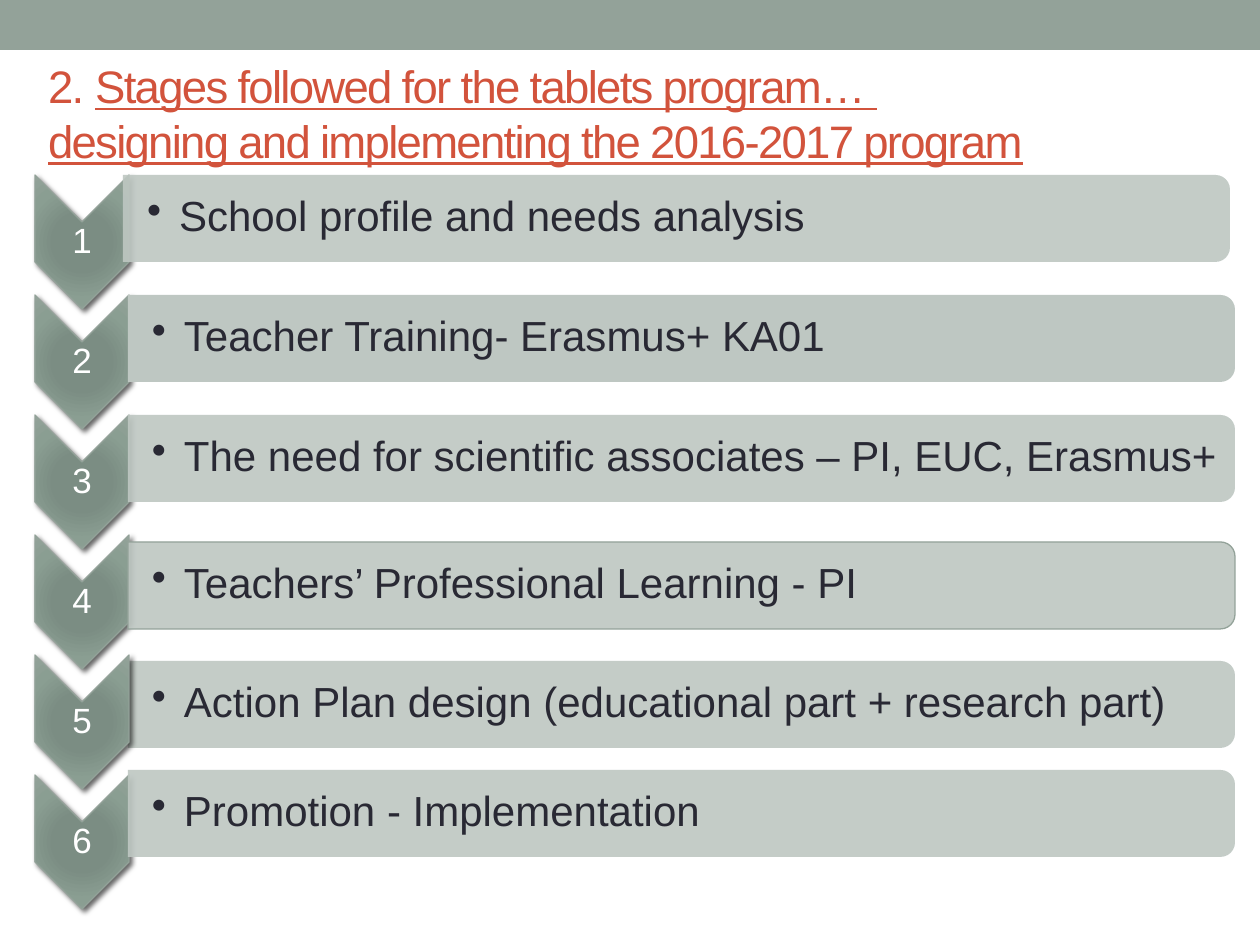
import pptx
import pptx.util
import pptx.dml.color
import pptx.enum.shapes
import pptx.enum.text
import pptx.oxml
import pptx.oxml.ns

PX = 914400 / 126
THEME = {
    "font": "Arial", "title_size": 26, "number_size": 20, "stage_size": 24,
    "accent": "93A299", "bar": "BEC7C2", "title": "D2533C", "number": "FFFFFF", "text": "292934",
    "chevron": [(0, "7B8E82"), (34, "7B8D83"), (70, "8A9E92"), (100, "93A299")],
}
NS = pptx.oxml.ns.nsdecls("a")
SHAPES = pptx.enum.shapes.MSO_SHAPE
ALIGN = pptx.enum.text.PP_ALIGN

deck = pptx.Presentation()
deck.slide_width, deck.slide_height = round(1260 * PX), round(945 * PX)
page = deck.slides.add_slide(deck.slide_layouts[6])


def add_text(runs, left, top, width, height, size, color, insets=(13, 6),
             align=ALIGN.LEFT, line=1.0, bullet=False, spacing=0):
    """Add a middle-anchored text box; runs are (text, underlined) pairs."""
    box = page.shapes.add_textbox(*(round(n * PX) for n in (left, top, width, height)))
    frame = box.text_frame
    frame.word_wrap = True
    frame.vertical_anchor = pptx.enum.text.MSO_ANCHOR.MIDDLE
    frame.margin_left = round(insets[0] * PX)
    frame.margin_right = round(min(insets[0], 13) * PX) if not bullet else round(insets[1] * PX)
    frame.margin_top = frame.margin_bottom = round(insets[1] * PX)
    para = frame.paragraphs[0]
    para.alignment = align
    para.line_spacing = line
    if bullet:
        props = para._p.get_or_add_pPr()
        props.set("marL", str(round(32 * PX)))
        props.set("indent", str(round(-32 * PX)))
        props.append(pptx.oxml.parse_xml(f'<a:buChar {NS} char="•"/>'))
    for text, underlined in runs:
        for index, part in enumerate(text.split("\n")):
            if index:
                para.add_line_break()
            span = para.add_run()
            span.text = part
            span.font.name = THEME["font"]
            span.font.size = pptx.util.Pt(size)
            span.font.color.rgb = pptx.dml.color.RGBColor.from_string(color)
            if underlined:
                span.font.underline = True
            if spacing:
                span._r.get_or_add_rPr().set("spc", str(spacing * 100))


def add_block(kind, left, top, width, height, fill, line=None, turned=True):
    """Add a shape by its visible bounds; a turned one is rotated by 90 degrees."""
    if turned:
        left, top = left + (width - height) / 2, top + (height - width) / 2
        width, height = height, width
    block = page.shapes.add_shape(kind, *(round(n * PX) for n in (left, top, width, height)))
    block.rotation = 90 if turned else 0
    block.shadow.inherit = False
    block.fill.solid()
    block.fill.fore_color.rgb = pptx.dml.color.RGBColor.from_string(fill)
    if line:
        block.line.color.rgb = pptx.dml.color.RGBColor.from_string(line)
        block.line.width = pptx.util.Pt(0.75)
    else:
        block.line.fill.background()
    return block


# Top band and title
add_block(SHAPES.RECTANGLE, 0, 0, 1260, 50, THEME["accent"], turned=False)
add_text([("2. ", False),
          ("Stages followed for the tablets program… \n"
           "designing and implementing the 2016-2017 program", True)],
         35, 45, 1201, 136, THEME["title_size"], THEME["title"], spacing=-1)

# Stage bars from back to front: label, left, top, opacity, outline
stages = [
    ("School profile and needs analysis", 123, 175, 90, None),
    ("Teacher Training- Erasmus+ KA01", 128, 295, 100, None),
    ("The need for scientific associates – PI, EUC, Erasmus+", 128, 415, 90, None),
    ("Action Plan design (educational part + research part)", 128, 661, 90, None),
    ("Teachers’ Professional Learning - PI", 128, 542, 90, THEME["accent"]),
    ("Promotion - Implementation", 128, 770, 90, None),
]
stops = "".join(f'<a:gs pos="{at * 1000}"><a:srgbClr val="{color}"/></a:gs>'
                for at, color in THEME["chevron"])
gradient = (f'<a:gradFill {NS} rotWithShape="1"><a:gsLst>{stops}</a:gsLst><a:path path="circle">'
            '<a:fillToRect l="100000" t="100000" r="100000" b="100000"/></a:path></a:gradFill>')
shadow = (f'<a:outerShdw {NS} blurRad="38100" dist="25400" dir="2700000" rotWithShape="0">'
          '<a:srgbClr val="000000"><a:alpha val="60000"/></a:srgbClr></a:outerShdw>')

for index, (label, left, top, opacity, outline) in enumerate(stages):
    # Numbered chevron
    chevron_top = 175 + 120 * index
    chevron = add_block(SHAPES.CHEVRON, 35, chevron_top, 94, 134, THEME["accent"], THEME["accent"])
    look = chevron._element.spPr
    look.replace(look.find(pptx.oxml.ns.qn("a:solidFill")), pptx.oxml.parse_xml(gradient))
    look.find(pptx.oxml.ns.qn("a:effectLst")).append(pptx.oxml.parse_xml(shadow))
    add_text([(str(index + 1), False)], 35, chevron_top + 47, 94, 40, THEME["number_size"],
             THEME["number"], insets=(1, 1), align=ALIGN.CENTER, line=0.9)

    # Stage bar
    bar = add_block(SHAPES.ROUND_2_SAME_RECTANGLE, left, top, 1107, 87, THEME["bar"], outline)
    if opacity < 100:
        tint = bar._element.spPr.find(pptx.oxml.ns.qn("a:solidFill"))[0]
        tint.append(pptx.oxml.parse_xml(f'<a:alpha {NS} val="{opacity * 1000}"/>'))
    add_text([(label, False)], left, top + 4, 1103, 78, THEME["stage_size"], THEME["text"],
             insets=(24, 2), line=0.9, bullet=True)

deck.save("out.pptx")
